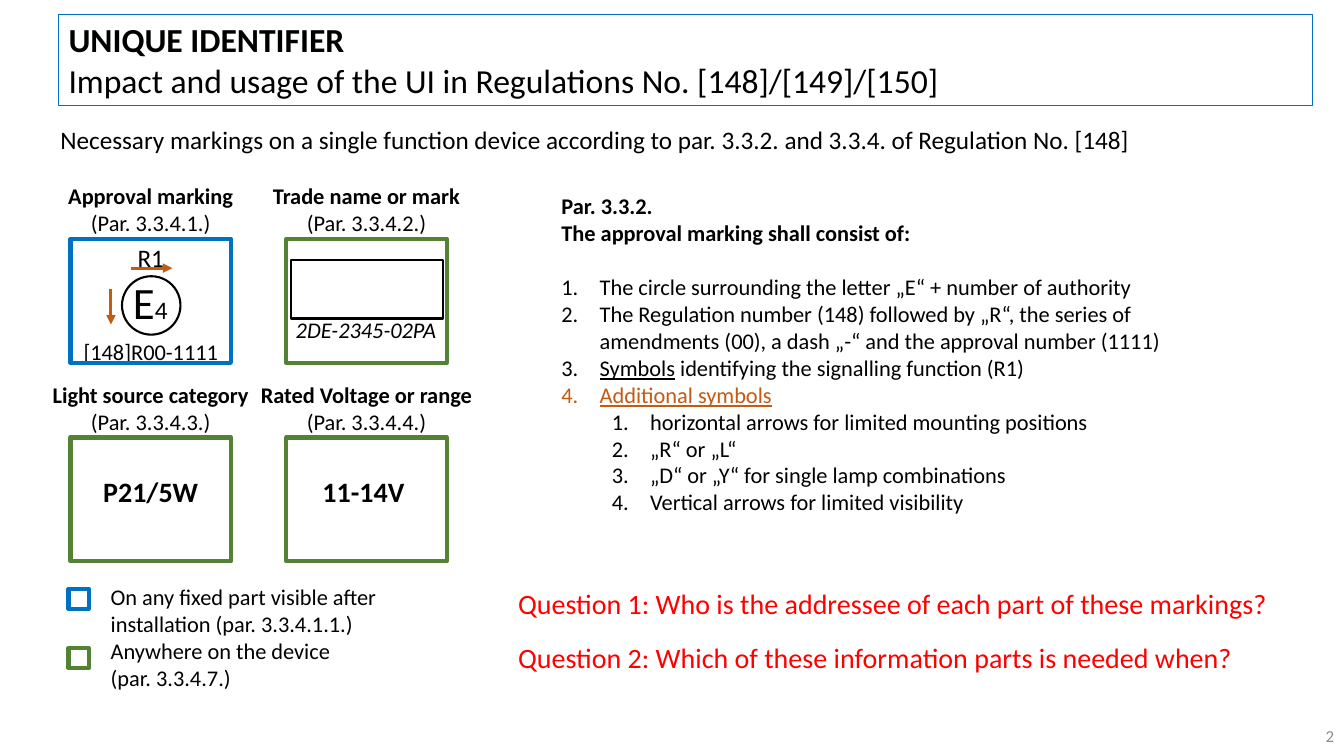
"""Build the slide on the unique identifier and the markings of a single function device."""
from dataclasses import dataclass
from typing import NamedTuple, Optional

from lxml.etree import SubElement
from pptx import Presentation
from pptx.dml.color import RGBColor
from pptx.enum.shapes import MSO_CONNECTOR, MSO_SHAPE as SHAPE
from pptx.enum.text import MSO_ANCHOR as ANCHOR, MSO_AUTO_SIZE as AUTO, PP_ALIGN as ALIGN
from pptx.oxml.ns import qn
from pptx.util import Inches, Pt

BLACK = RGBColor(0x00, 0x00, 0x00)
WHITE = RGBColor(0xFF, 0xFF, 0xFF)
BLUE = RGBColor(0x00, 0x70, 0xC0)
GREEN = RGBColor(0x54, 0x82, 0x35)
ORANGE = RGBColor(0xC5, 0x5A, 0x11)
RED = RGBColor(0xFF, 0x00, 0x00)
GREY = RGBColor(0x8C, 0x8C, 0x8C)
FONT = "Calibri"

COLUMNS = (0.7, 2.84)
ROWS = (2.37, 4.34)
FRAME_W, FRAME_H = 1.59, 1.23
HEADING_W, HEADING_H, HEADING_RISE = 2.57, 0.64, 0.61
INDENT = 0.38


class Box(NamedTuple):
    left: float
    top: float
    width: float
    height: float


@dataclass
class Run:
    text: str
    size: float = 16
    bold: bool = False
    italic: bool = False
    underline: bool = False
    color: RGBColor = BLACK


@dataclass
class Para:
    runs: list[Run]
    align: ALIGN = ALIGN.LEFT
    spacing: Optional[float] = None
    before: float = 0
    level: Optional[int] = None


@dataclass
class Marking:
    heading: str
    paragraph: str
    color: RGBColor
    col: int
    row: int


MARKINGS = [
    Marking("Approval marking", "(Par. 3.3.4.1.)", BLUE, 0, 0),
    Marking("Trade name or mark", "(Par. 3.3.4.2.)", GREEN, 1, 0),
    Marking("Light source category", "(Par. 3.3.4.3.)", GREEN, 0, 1),
    Marking("Rated Voltage or range", "(Par. 3.3.4.4.)", GREEN, 1, 1),
]


def line(text: str, align: ALIGN = ALIGN.LEFT, spacing: Optional[float] = None,
         before: float = 0, level: Optional[int] = None, **font) -> Para:
    return Para([Run(text, **font)], align, spacing, before, level)


def centred(text: str, **kwargs) -> Para:
    return line(text, align=ALIGN.CENTER, **kwargs)


LABELS = [
    (Box(1.22, 2.68, 0.62, 0.64), [Para([Run("E", 32), Run("4", 18)])]),
    (Box(0.73, 3.16, 1.59, 0.48), [line("[148]R00-1111", spacing=30)]),
    (Box(1.19, 2.24, 0.61, 0.48), [centred("R1", size=18, spacing=30)]),
    (Box(2.7, 3.09, 1.86, 0.37), [centred("2DE-2345-02PA", italic=True)]),
    (Box(0.84, 4.66, 1.31, 0.44), [centred("P21/5W", size=20, bold=True)]),
    (Box(2.95, 4.66, 1.31, 0.44), [centred("11-14V", size=20, bold=True)]),
    (Box(0.5, 1.18, 11.55, 0.4), [line(
        "Necessary markings on a single function device according to "
        "par. 3.3.2. and 3.3.4. of Regulation No. [148]", size=18)]),
    (Box(1, 5.74, 3.56, 1.18), [
        line("On any fixed part visible after installation (par. 3.3.4.1.1.)"),
        line("Anywhere on the device"),
        line("(par. 3.3.4.7.)")]),
    (Box(5.04, 5.77, 7.73, 0.44), [line(
        "Question 1: Who is the addressee of each part of these markings?",
        size=20, color=RED)]),
    (Box(5.04, 6.31, 7.73, 0.44), [line(
        "Question 2: Which of these information parts is needed when?",
        size=20, color=RED)]),
    (Box(5.47, 1.86, 6.8, 3.6), [
        line("Par. 3.3.2.", bold=True),
        line("The approval marking shall consist of:", bold=True),
        line("The circle surrounding the letter „E“ + number of authority",
             level=0, before=19.5),
        line("The Regulation number (148) followed by „R“, the series of amendments (00), "
             "a dash „-“ and the approval number (1111)", level=0),
        Para([Run("Symbols", underline=True),
              Run(" identifying the signalling function (R1)")], level=0),
        line("Additional symbols", level=0, underline=True, color=ORANGE),
        line("horizontal arrows for limited mounting positions", level=1),
        line("„R“ or „L“", level=1),
        line("„D“ or „Y“ for single lamp combinations", level=1),
        line("Vertical arrows for limited visibility", level=1)]),
]


def place(sp, box: Box) -> None:
    sp.left, sp.top, sp.width, sp.height = map(Inches, box)


def number(p, level: int) -> None:
    p.level = level
    pPr = p._p.get_or_add_pPr()
    pPr.set("marL", str(Inches(INDENT + 0.5 * level)))
    pPr.set("indent", str(Inches(-INDENT)))
    SubElement(pPr, qn("a:buFont"), typeface="+mj-lt")
    SubElement(pPr, qn("a:buAutoNum"), type="arabicPeriod")


def write(tf, paras: list[Para], anchor: ANCHOR = ANCHOR.TOP, auto: AUTO = AUTO.SHAPE_TO_FIT_TEXT) -> None:
    tf.word_wrap, tf.auto_size, tf.vertical_anchor = True, auto, anchor
    for i, para in enumerate(paras):
        p = tf.add_paragraph() if i else tf.paragraphs[0]
        p.alignment = para.align
        if para.spacing:
            p.line_spacing = Pt(para.spacing)
        if para.before:
            p.space_before = Pt(para.before)
        if para.level is not None:
            number(p, para.level)
        for run in para.runs:
            r = p.add_run()
            r.text = run.text
            f = r.font
            f.name, f.size, f.color.rgb = FONT, Pt(run.size), run.color
            f.bold, f.italic, f.underline = run.bold, run.italic, run.underline


def add_text(slide, box: Box, paras: list[Para], **kwargs) -> None:
    write(slide.shapes.add_textbox(*map(Inches, box)).text_frame, paras, **kwargs)


def add_outline(slide, kind: SHAPE, box: Box, color: RGBColor, width: float,
                fill: Optional[RGBColor] = None) -> None:
    sp = slide.shapes.add_shape(kind, *map(Inches, box))
    sp.shadow.inherit = False
    if fill is None:
        sp.fill.background()
    else:
        sp.fill.solid()
        sp.fill.fore_color.rgb = fill
    sp.line.color.rgb, sp.line.width = color, Pt(width)


def add_arrow(slide, x1: float, y1: float, x2: float, y2: float) -> None:
    cx = slide.shapes.add_connector(MSO_CONNECTOR.STRAIGHT, *map(Inches, (x1, y1, x2, y2)))
    cx.line.color.rgb, cx.line.width = ORANGE, Pt(2.25)
    SubElement(cx.line._get_or_add_ln(), qn("a:tailEnd"), type="triangle")
    SubElement(cx._element.spPr, qn("a:effectLst"))


def add_marking(slide, m: Marking) -> None:
    left, top = COLUMNS[m.col], ROWS[m.row]
    add_outline(slide, SHAPE.RECTANGLE, Box(left, top, FRAME_W, FRAME_H), m.color, 3)
    heading = Box(left + (FRAME_W - HEADING_W) / 2, top - HEADING_RISE, HEADING_W, HEADING_H)
    add_text(slide, heading, [centred(m.heading, bold=True), centred(m.paragraph)])


def main() -> None:
    prs = Presentation()
    prs.slide_width, prs.slide_height = Inches(13.33), Inches(7.5)
    slide = prs.slides.add_slide(prs.slide_layouts[5])

    title = slide.shapes.title
    place(title, Box(0.58, 0.14, 12.44, 0.91))
    title.line.color.rgb, title.line.width = BLUE, Pt(0.75)
    write(title.text_frame, [
        line("UNIQUE IDENTIFIER", size=24, bold=True),
        line("Impact and usage of the UI in Regulations No. [148]/[149]/[150]", size=24)])

    add_outline(slide, SHAPE.OVAL, Box(1.21, 2.74, 0.58, 0.58), BLACK, 1.5)
    add_outline(slide, SHAPE.RECTANGLE, Box(2.89, 2.58, 1.5, 0.58), BLACK, 1.5, WHITE)
    for box, paras in LABELS:
        add_text(slide, box, paras)
    for marking in MARKINGS:
        add_marking(slide, marking)
    for top, color in ((5.84, BLUE), (6.43, GREEN)):
        add_outline(slide, SHAPE.RECTANGLE, Box(0.68, top, 0.2, 0.2), color, 3)
    add_arrow(slide, 1.3, 2.66, 1.71, 2.66)
    add_arrow(slide, 1.1, 2.87, 1.1, 3.22)
    add_text(slide, Box(10.33, 7.1, 3, 0.4), [line("2", align=ALIGN.RIGHT, size=12, color=GREY)],
             anchor=ANCHOR.MIDDLE, auto=AUTO.NONE)
    prs.save("out.pptx")


if __name__ == "__main__":
    main()
